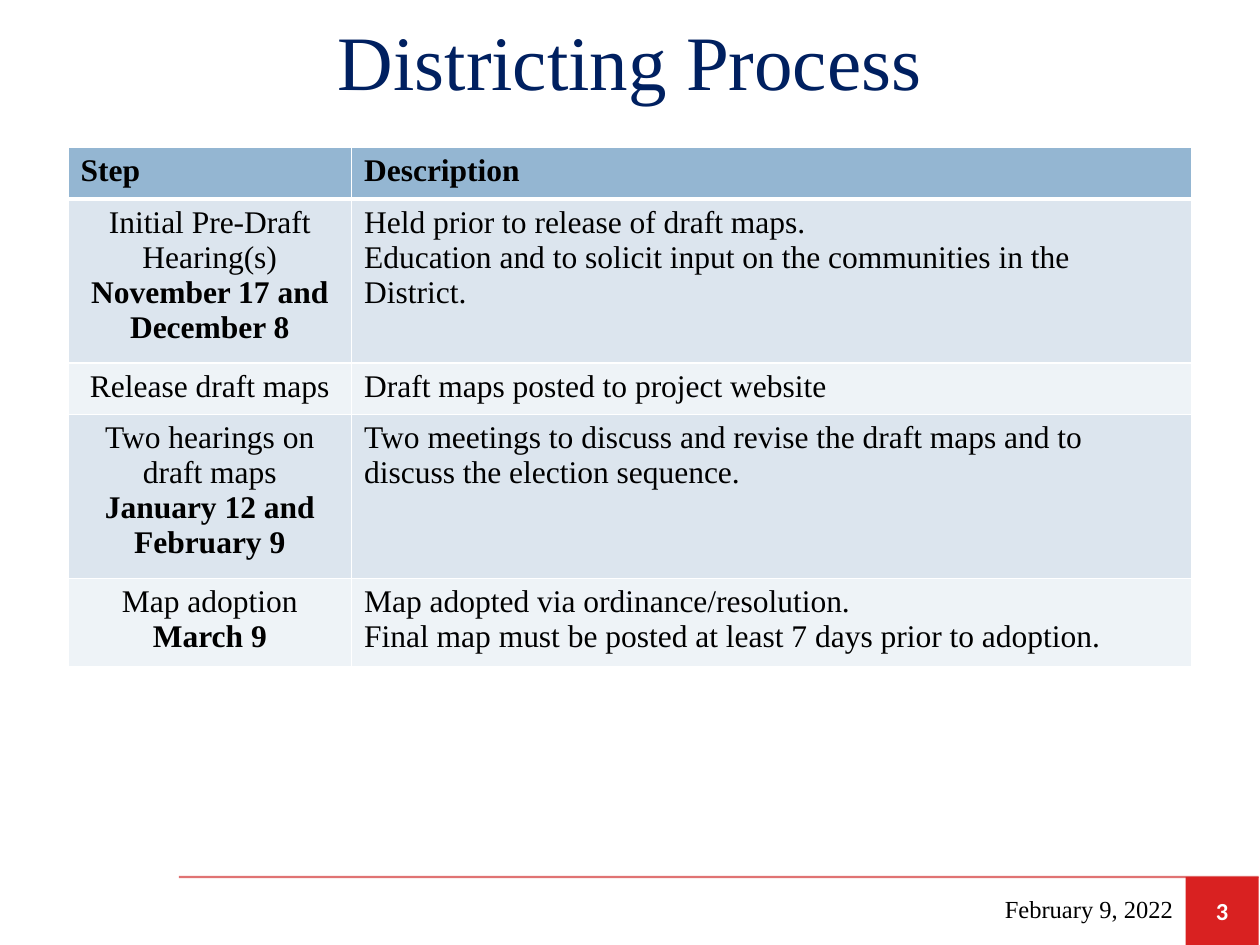
from dataclasses import dataclass

from lxml import etree
from pptx import Presentation
from pptx.dml.color import RGBColor
from pptx.enum.shapes import MSO_CONNECTOR, MSO_SHAPE
from pptx.enum.text import MSO_ANCHOR, PP_ALIGN
from pptx.oxml.ns import qn
from pptx.util import Inches, Pt


@dataclass(frozen=True)
class Theme:
    serif: str = "Times New Roman"
    sans: str = "Calibri"
    navy: str = "002060"
    black: str = "000000"
    white: str = "FFFFFF"
    red: str = "D92121"
    rule: str = "C80000"
    header: str = "94B6D2"
    bands: tuple = ("DCE5EE", "EEF3F7")
    title_size: int = 44
    body_size: int = 18
    footer_size: int = 14


THEME = Theme()

# Each row: step, dates (or None), description paragraphs
STEPS = [
    ("Initial Pre-Draft Hearing(s)", "November 17 and December 8",
     ["Held prior to release of draft maps.",
      "Education and to solicit input on the communities in the District."]),
    ("Release draft maps", None, ["Draft maps posted to project website"]),
    ("Two hearings on draft maps", "January 12 and February 9",
     ["Two meetings to discuss and revise the draft maps and to discuss "
      "the election sequence."]),
    ("Map adoption", "March 9",
     ["Map adopted via ordinance/resolution.",
      "Final map must be posted at least 7 days prior to adoption."]),
]


def rgb(color):
    return RGBColor.from_string(color)


def write(frame, lines, size, color=THEME.black, font=THEME.serif,
          align=PP_ALIGN.LEFT):
    """Fill a text frame with one paragraph per (text, bold) pair."""
    frame.word_wrap = True
    for index, (text, bold) in enumerate(lines):
        paragraph = frame.paragraphs[0] if index == 0 else frame.add_paragraph()
        paragraph.alignment = align
        run = paragraph.add_run()
        run.text = text
        run.font.name = font
        run.font.size = Pt(size)
        run.font.bold = bold
        run.font.color.rgb = rgb(color)


def add_label(slide, box, text, size, color, align, anchor):
    label = slide.shapes.add_textbox(*map(Inches, box)).text_frame
    label.vertical_anchor = anchor
    write(label, [(text, False)], size, color, align=align)


def set_cell_borders(cell, bottom_width):
    """Draw white borders; they must come before the fill in the XML."""
    properties = cell._tc.get_or_add_tcPr()
    widths = {"a:lnL": 1, "a:lnR": 1, "a:lnT": 1, "a:lnB": bottom_width}
    for position, (tag, width) in enumerate(widths.items()):
        border = etree.Element(qn(tag), w=str(Pt(width)))
        fill = etree.SubElement(border, qn("a:solidFill"))
        etree.SubElement(fill, qn("a:srgbClr"), val=THEME.white)
        properties.insert(position, border)


def fill_cell(cell, lines, color, align=PP_ALIGN.LEFT, bottom_width=1):
    cell.fill.solid()
    cell.fill.fore_color.rgb = rgb(color)
    set_cell_borders(cell, bottom_width)
    write(cell.text_frame, lines, THEME.body_size, align=align)


def add_steps_table(slide, box, step_width=2.25, row_height=0.41):
    left, top, width, height = box
    frame = slide.shapes.add_table(len(STEPS) + 1, 2, *map(Inches, box))
    table = frame.table
    table.columns[0].width = Inches(step_width)
    table.columns[1].width = Inches(width - step_width)
    for row in table.rows:
        row.height = Inches(row_height)
    frame.height = Inches(height)

    for column, heading in enumerate(("Step", "Description")):
        fill_cell(table.cell(0, column), [(heading, True)], THEME.header,
                  bottom_width=3)
    for row, (step, dates, description) in enumerate(STEPS, start=1):
        band = THEME.bands[(row - 1) % 2]
        step_lines = [(step, False)] + ([(dates, True)] if dates else [])
        fill_cell(table.cell(row, 0), step_lines, band, PP_ALIGN.CENTER)
        fill_cell(table.cell(row, 1), [(text, False) for text in description],
                  band)


def add_footer(slide, box, number_width=0.58, date_width=2.92):
    left, top, width, height = box
    right = left + width
    number_left = right - number_width

    rule = slide.shapes.add_connector(
        MSO_CONNECTOR.STRAIGHT, Inches(left), Inches(top), Inches(right), Inches(top))
    rule.line.color.rgb = rgb(THEME.rule)
    rule.line.width = Pt(1.25)
    rule_color = rule.line._ln.find(".//" + qn("a:srgbClr"))
    etree.SubElement(rule_color, qn("a:alpha"), val="55000")
    etree.SubElement(rule._element.spPr, qn("a:effectLst"))

    number = slide.shapes.add_shape(
        MSO_SHAPE.RECTANGLE, Inches(number_left), Inches(top),
        Inches(number_width), Inches(height))
    number.shadow.inherit = False
    number.fill.solid()
    number.fill.fore_color.rgb = rgb(THEME.red)
    number.line.fill.background()
    number.text_frame.vertical_anchor = MSO_ANCHOR.MIDDLE
    write(number.text_frame, [("3", True)], THEME.footer_size, THEME.white,
          THEME.sans, PP_ALIGN.CENTER)

    add_label(slide, (number_left - date_width, top + 0.05, date_width, 0.4),
              "February 9, 2022", THEME.footer_size, THEME.black,
              PP_ALIGN.RIGHT, MSO_ANCHOR.MIDDLE)


def main():
    deck = Presentation()
    deck.slide_width, deck.slide_height = Inches(10), Inches(7.5)
    slide = deck.slides.add_slide(deck.slide_layouts[6])
    add_footer(slide, (1.42, 6.96, 8.57, 0.54))
    add_label(slide, (0.01, 0, 9.98, 0.95), "Districting Process",
              THEME.title_size, THEME.navy, PP_ALIGN.CENTER, MSO_ANCHOR.MIDDLE)
    add_steps_table(slide, (0.54, 1.17, 8.92, 4.11))
    deck.save("out.pptx")


if __name__ == "__main__":
    main()
